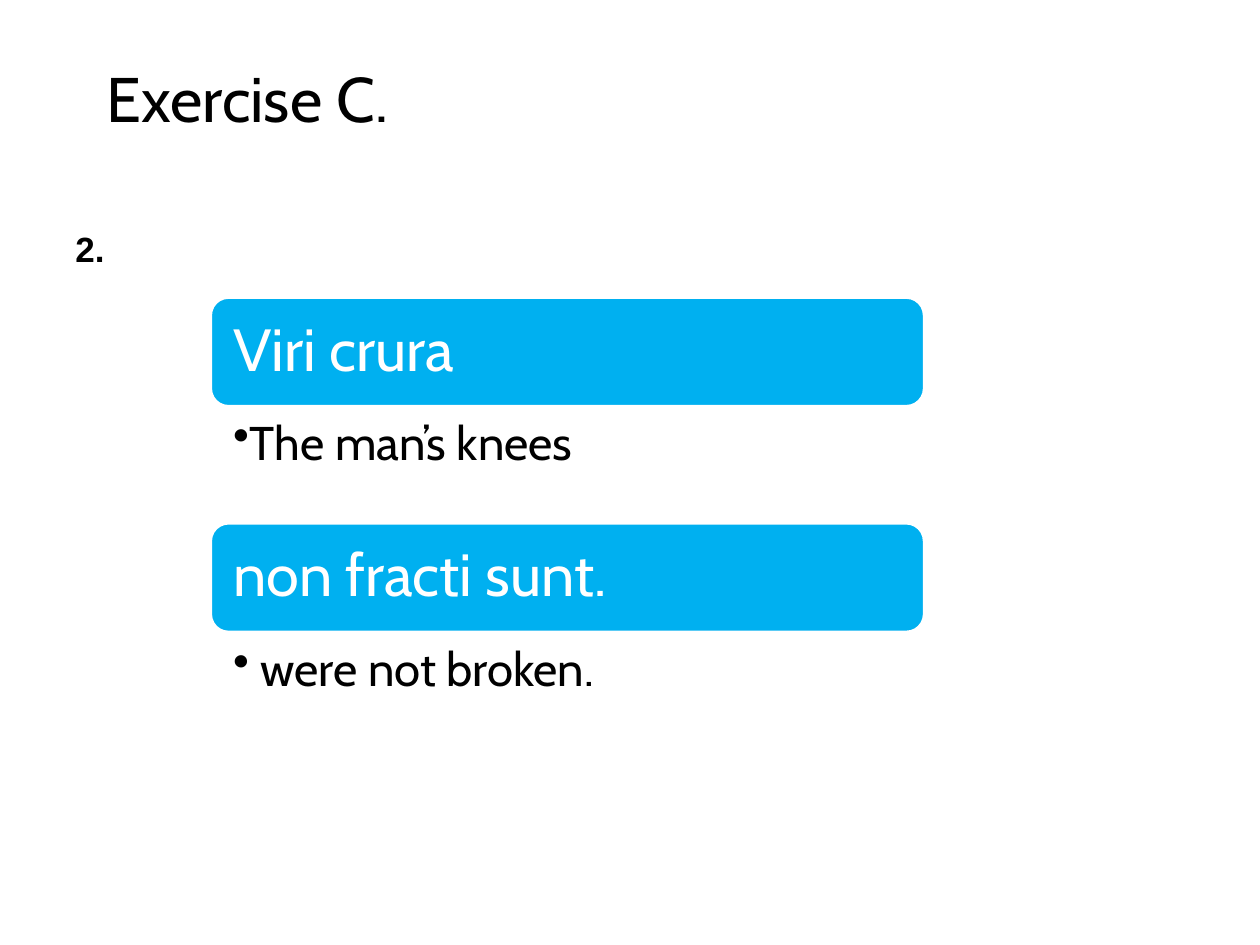
from dataclasses import dataclass

from lxml.etree import SubElement
from pptx import Presentation
from pptx.dml.color import RGBColor
from pptx.enum.shapes import MSO_SHAPE
from pptx.enum.text import MSO_ANCHOR, MSO_AUTO_SIZE, PP_ALIGN
from pptx.oxml.ns import qn
from pptx.util import Cm, Pt


@dataclass(frozen=True)
class Theme:
    ink: RGBColor = RGBColor(0, 0, 0)
    paper: RGBColor = RGBColor(255, 255, 255)
    accent: RGBColor = RGBColor(0, 176, 240)
    main_font: str = "Cabin"
    number_font: str = "Arial"
    title_size: int = 36
    phrase_size: int = 34
    gloss_size: int = 27
    number_size: int = 20
    outline: int = 2


def write(frame, text, *, font, size, color, bold=False, bullet=None,
          level=0, line_spacing=None, anchor=MSO_ANCHOR.TOP,
          insets=(0.25, 0.13, 0.25, 0.13), wrap=True,
          auto_size=MSO_AUTO_SIZE.NONE):
    frame.auto_size = auto_size
    frame.word_wrap = wrap
    frame.vertical_anchor = anchor
    (frame.margin_left, frame.margin_top,
     frame.margin_right, frame.margin_bottom) = map(Cm, insets)
    paragraph = frame.paragraphs[0]
    paragraph.text = text
    paragraph.alignment = PP_ALIGN.LEFT
    paragraph.level = level
    if line_spacing:
        paragraph.line_spacing = line_spacing
    if bullet:
        properties = paragraph._p.get_or_add_pPr()
        properties.set("marL", "0")
        properties.set("indent", "0")
        SubElement(properties, qn("a:buChar")).set("char", bullet)
    style = paragraph.runs[0].font
    style.name, style.size, style.bold = font, Pt(size), bold
    style.color.rgb = color


class ExerciseSlide:
    def __init__(self, presentation, theme):
        self.theme = theme
        self.slide = presentation.slides.add_slide(presentation.slide_layouts[5])

    def title(self, text, left, top, width, height):
        heading = self.slide.shapes.title
        heading.left, heading.top = Cm(left), Cm(top)
        heading.width, heading.height = Cm(width), Cm(height)
        write(heading.text_frame, text, font=self.theme.main_font,
              size=self.theme.title_size, color=self.theme.ink,
              wrap=False, auto_size=MSO_AUTO_SIZE.SHAPE_TO_FIT_TEXT)

    def label(self, text, left, top, width, height, **style):
        box = self.slide.shapes.add_textbox(Cm(left), Cm(top), Cm(width), Cm(height))
        write(box.text_frame, text, color=self.theme.ink, **style)

    def number(self, text, *place):
        self.label(text, *place, font=self.theme.number_font,
                   size=self.theme.number_size, bold=True,
                   auto_size=MSO_AUTO_SIZE.SHAPE_TO_FIT_TEXT)

    def phrase(self, text, left, top, width, height):
        bar = self.slide.shapes.add_shape(
            MSO_SHAPE.ROUNDED_RECTANGLE, Cm(left), Cm(top), Cm(width), Cm(height))
        bar.shadow.inherit = False
        bar.fill.solid()
        bar.fill.fore_color.rgb = self.theme.accent
        bar.line.color.rgb = self.theme.paper
        bar.line.width = Pt(self.theme.outline)
        write(bar.text_frame, text, font=self.theme.main_font,
              size=self.theme.phrase_size, color=self.theme.paper,
              line_spacing=0.9, anchor=MSO_ANCHOR.MIDDLE, insets=(0.36,) * 4)

    def gloss(self, text, *place):
        self.label(text, *place, font=self.theme.main_font,
                   size=self.theme.gloss_size, bullet="•", level=1,
                   insets=(0.46, 0.13, 0.66, 0.13))


def main():
    presentation = Presentation()
    presentation.slide_width, presentation.slide_height = Cm(25.4), Cm(19.05)
    exercise = ExerciseSlide(presentation, Theme())
    exercise.title("Exercise C.", 1.9, 1.07, 6.38, 1.8)

    translations = [
        ("Viri crura", "The man’s knees"),
        ("non fracti sunt.", " were not broken."),
    ]
    left, first_top, width = 4.24, 5.99, 14.4
    phrase_height, gloss_height = 2.21, 2.34
    for row, (latin, english) in enumerate(translations):
        top = first_top + row * (phrase_height + gloss_height)
        exercise.phrase(latin, left, top, width, phrase_height)
        exercise.gloss(english, left, top + phrase_height, width, gloss_height)

    exercise.number("2.", 1.27, 4.45, 1.7, 1.12)
    presentation.save("out.pptx")


if __name__ == "__main__":
    main()
